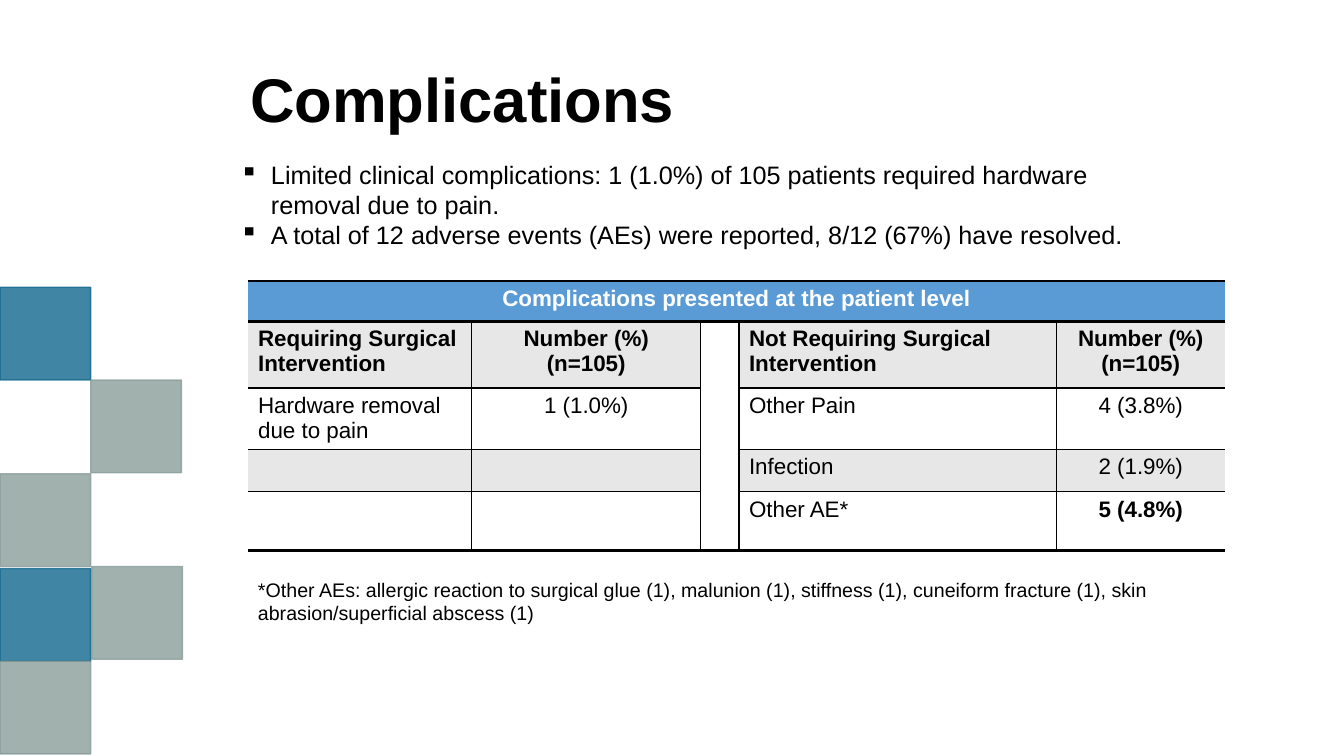
from pptx import Presentation
from pptx.dml.color import RGBColor
from pptx.enum.shapes import MSO_SHAPE as Shape
from pptx.enum.text import MSO_ANCHOR as Anchor, PP_ALIGN as Align
from pptx.oxml.ns import qn
from pptx.oxml.xmlchemy import OxmlElement
from pptx.util import Inches, Pt

BLACK = RGBColor(0x00, 0x00, 0x00)
WHITE = RGBColor(0xFF, 0xFF, 0xFF)
BLUE = RGBColor(0x5B, 0x9B, 0xD5)
GREY = RGBColor(0xE7, 0xE7, 0xE7)
TEAL = RGBColor(0x00, 0x5D, 0x85)
SAGE = RGBColor(0x82, 0x97, 0x94)

SQUARES = [(0, 2.85, TEAL), (0, 5.64, TEAL), (0, 6.56, SAGE),
           (0.9, 3.77, SAGE), (0.91, 5.62, SAGE), (0, 4.7, SAGE)]
FINDINGS = [
    "Limited clinical complications: 1 (1.0%) of 105 patients required hardware removal due to pain.",
    "A total of 12 adverse events (AEs) were reported, 8/12 (67%) have resolved.",
]
FOOTNOTE = ("*Other AEs: allergic reaction to surgical glue (1), malunion (1), stiffness (1), "
            "cuneiform fracture (1), skin abrasion/superficial abscess (1)")
COUNT_HEADING = "Number (%)\n(n=105)"
COMPLICATIONS = [
    ["Complications presented at the patient level", "", "", "", ""],
    ["Requiring Surgical Intervention", COUNT_HEADING, "",
     "Not Requiring Surgical Intervention", COUNT_HEADING],
    ["Hardware removal due to pain", "1 (1.0%)", "", "Other Pain", "4 (3.8%)"],
    ["", "", "", "Infection", "2 (1.9%)"],
    ["", "", "", "Other AE*", "5 (4.8%)"],
]
COLUMN_WIDTHS = [2.22, 2.27, 0.38, 3.15, 1.67]
ROW_HEIGHTS = [0.4, 0.66, 0.61, 0.42, 0.58]
GAP_COLUMN = 2
LAST = 4


def rule_width(row, column):
    """Width in points of the horizontal rule under a row; row -1 is the top edge."""
    if row in (-1, 0, LAST):
        return 2
    return 0 if column == GAP_COLUMN else 1


def divider_width(row, column):
    """Width in points of the vertical rule right of a column."""
    return 1 if row > 0 and 0 <= column < LAST else 0


class SlideBuilder:
    def __init__(self, presentation, font="Arial"):
        self.font = font
        self.slide = presentation.slides.add_slide(presentation.slide_layouts[5])

    def add_run(self, paragraph, text, size, color=BLACK, bold=False):
        run = paragraph.add_run()
        run.text = text
        run.font.name = self.font
        run.font.size = Pt(size)
        run.font.bold = bold
        run.font.color.rgb = color

    def title(self, text, left, top, width, height):
        heading = self.slide.shapes.title
        heading.left, heading.top = Inches(left), Inches(top)
        heading.width, heading.height = Inches(width), Inches(height)
        heading.text_frame.vertical_anchor = Anchor.MIDDLE
        paragraph = heading.text_frame.paragraphs[0]
        paragraph.alignment = Align.LEFT
        paragraph.line_spacing = 0.9
        self.add_run(paragraph, text, 44, bold=True)

    def square(self, left, top, color):
        """Draw a decorative square at 75% opacity."""
        square = self.slide.shapes.add_shape(
            Shape.RECTANGLE, Inches(left), Inches(top), Inches(0.9), Inches(0.92))
        square.shadow.inherit = False
        square.fill.solid()
        square.fill.fore_color.rgb = color
        square.line.color.rgb = color
        square.line.width = Pt(1)
        for tint in square._element.spPr.iter(qn("a:srgbClr")):
            alpha = OxmlElement("a:alpha")
            alpha.set("val", "75000")
            tint.append(alpha)

    def text(self, lines, left, top, width, height, size, bullet=None):
        box = self.slide.shapes.add_textbox(
            Inches(left), Inches(top), Inches(width), Inches(height))
        frame = box.text_frame
        frame.word_wrap = True
        for index, line in enumerate(lines):
            paragraph = frame.add_paragraph() if index else frame.paragraphs[0]
            if bullet:
                properties = paragraph._p.get_or_add_pPr()
                properties.set("marL", str(Inches(0.31)))
                properties.set("indent", str(-Inches(0.31)))
                mark = OxmlElement("a:buChar")
                mark.set("char", bullet)
                properties.append(mark)
            self.add_run(paragraph, line, size)

    def border(self, cell, sides):
        """Set the widths in points of the left, right, top and bottom borders."""
        properties = cell._tc.get_or_add_tcPr()
        for index, (side, width) in enumerate(sides.items()):
            line = OxmlElement(f"a:ln{side}")
            line.set("w", str(Pt(width)))
            if width:
                paint = OxmlElement("a:solidFill")
                color = OxmlElement("a:srgbClr")
                color.set("val", str(BLACK))
                paint.append(color)
            else:
                paint = OxmlElement("a:noFill")
            line.append(paint)
            properties.insert(index, line)

    def cell(self, cell, text, row, column):
        cell.fill.solid()
        if row == 0:
            cell.fill.fore_color.rgb = BLUE
        else:
            shaded = row % 2 == 1 and column != GAP_COLUMN
            cell.fill.fore_color.rgb = GREY if shaded else WHITE
        self.border(cell, {"L": divider_width(row, column - 1), "R": divider_width(row, column),
                           "T": rule_width(row - 1, column), "B": rule_width(row, column)})
        bold = row < 2 or (row == LAST and column == LAST)
        for index, line in enumerate(text.split("\n") if text else []):
            frame = cell.text_frame
            paragraph = frame.add_paragraph() if index else frame.paragraphs[0]
            paragraph.alignment = Align.CENTER if row == 0 or column in (1, LAST) else Align.LEFT
            self.add_run(paragraph, line, 16, BLACK if row else WHITE, bold)

    def table(self, rows, left, top):
        table = self.slide.shapes.add_table(
            len(rows), len(COLUMN_WIDTHS), Inches(left), Inches(top),
            Inches(sum(COLUMN_WIDTHS)), Inches(sum(ROW_HEIGHTS))).table
        table.horz_banding = False
        for column, width in zip(table.columns, COLUMN_WIDTHS):
            column.width = Inches(width)
        for row, height in zip(table.rows, ROW_HEIGHTS):
            row.height = Inches(height)
        table.cell(0, 0).merge(table.cell(0, LAST))
        for r, row in enumerate(rows):
            for c, text in enumerate(row):
                self.cell(table.cell(r, c), text, r, c)


def main():
    presentation = Presentation()
    presentation.slide_width = Inches(13.33)
    presentation.slide_height = Inches(7.5)
    builder = SlideBuilder(presentation)
    for left, top, color in SQUARES:
        builder.square(left, top, color)
    builder.title("Complications", 2.38, 0.51, 10.04, 1.02)
    builder.table(COMPLICATIONS, 2.46, 2.79)
    builder.text(FINDINGS, 2.28, 1.53, 9.34, 1.01, 18, bullet="▪")
    builder.text([FOOTNOTE], 2.46, 5.68, 9.69, 0.57, 14)
    presentation.save("out.pptx")


if __name__ == "__main__":
    main()
